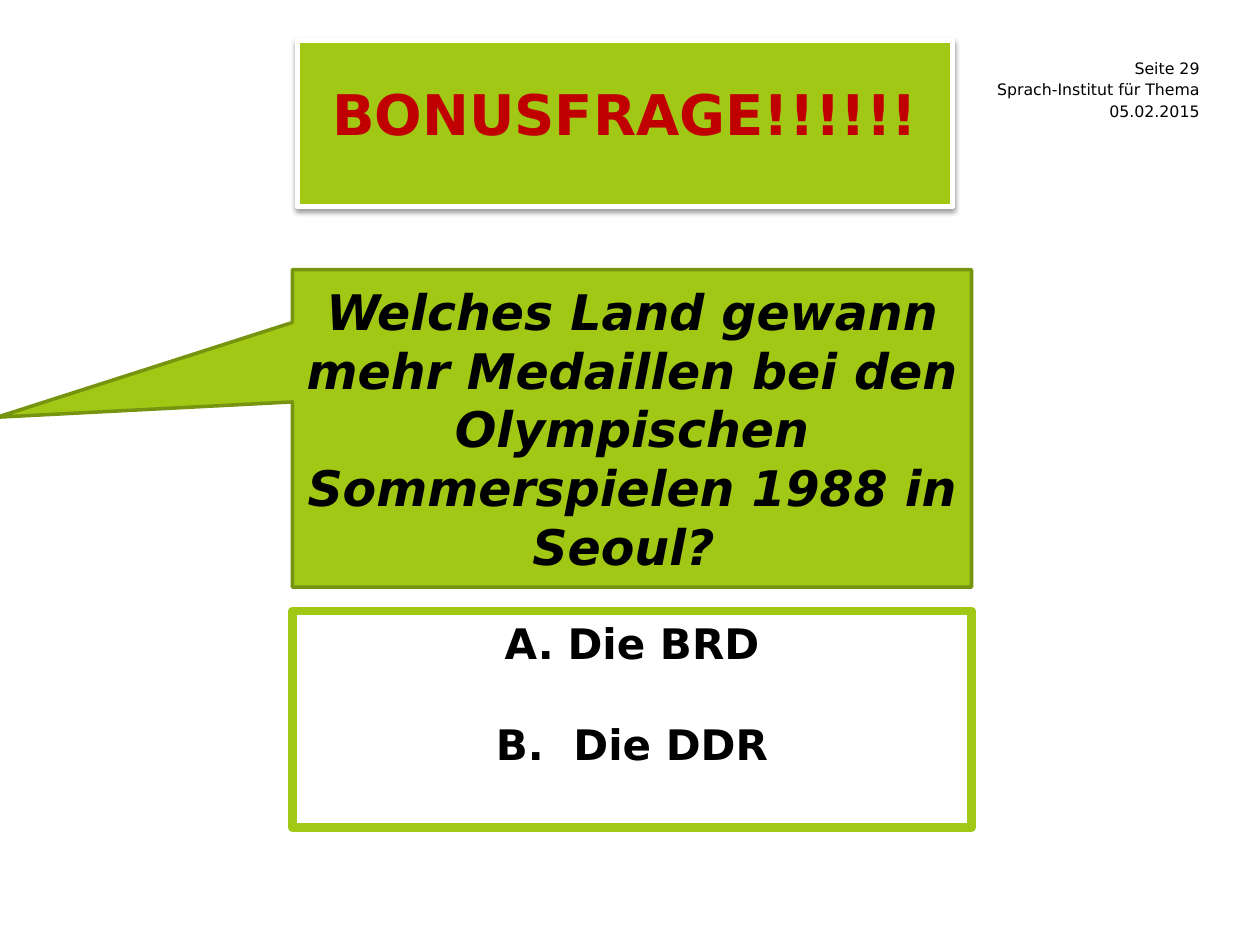
"""Build the bonus question slide of a German history quiz."""
from typing import Any, NamedTuple

from lxml.etree import SubElement
from pptx import Presentation
from pptx.dml.color import RGBColor
from pptx.enum.shapes import MSO_SHAPE as Preset
from pptx.enum.text import MSO_ANCHOR as Anchor, MSO_AUTO_SIZE as AutoSize, PP_ALIGN as Align
from pptx.oxml.ns import qn
from pptx.util import Inches, Pt

WIDTH, HEIGHT = Inches(10), Inches(7.5)
GREEN = RGBColor(0xA0, 0xC8, 0x14)
DARK_GREEN = RGBColor(0x76, 0x94, 0x0F)
RED = RGBColor(0xC0, 0x00, 0x00)
BLACK = RGBColor(0x00, 0x00, 0x00)
WHITE = RGBColor(0xFF, 0xFF, 0xFF)
FONT = "DejaVu Sans"
NO_MARGINS = dict.fromkeys(("margin_left", "margin_right", "margin_top", "margin_bottom"), 0)


class Area(NamedTuple):
    """A rectangle in percent of the slide's width and height."""

    left: float
    top: float
    width: float
    height: float


class Panel(NamedTuple):
    """A bordered shape with its preset, colours and line width in points."""

    preset: Preset
    area: Area
    fill: RGBColor | None
    border: RGBColor
    border_width: float


QUESTION = Panel(Preset.RECTANGULAR_CALLOUT, Area(23.2, 28.53, 53.9, 33.6), GREEN, DARK_GREEN, 2)
ANSWERS = Panel(Preset.RECTANGLE, Area(23.2, 64.67, 53.9, 22.93), None, GREEN, 5)
TITLE_AREA = Area(23.6, 4.27, 52, 17.6)
INFO_AREA = Area(73.2, 6.13, 22, 2.13)
INFO_PITCH = 2.27
INFO_LINES = ("Seite 29", "Sprach-Institut für Thema", "05.02.2015")


def apply(target: Any, values: dict[str, Any]) -> None:
    """Set every attribute named in values on the target."""
    for name, value in values.items():
        setattr(target, name, value)


def bounds(area: Area) -> dict[str, int]:
    """Convert an area to the slide's lengths."""
    sides = (WIDTH, HEIGHT, WIDTH, HEIGHT)
    return {name: round(share * side / 100)
            for name, share, side in zip(area._fields, area, sides)}


def write(paragraph: Any, wording: str, size: float, align: Align,
          color: RGBColor = BLACK, **style: bool) -> None:
    """Fill a paragraph with one formatted run."""
    paragraph.alignment = align
    run = paragraph.add_run()
    run.text = wording
    apply(run.font, {"name": FONT, "size": Pt(size), **style})
    run.font.color.rgb = color


def paint(shape: Any, fill: RGBColor | None, border: RGBColor, border_width: float) -> None:
    """Set a shape's fill and border."""
    if fill is None:
        shape.fill.background()
    else:
        shape.fill.solid()
        shape.fill.fore_color.rgb = fill
    shape.line.color.rgb = border
    shape.line.width = Pt(border_width)


def add_panel(slide: Any, panel: Panel, anchor: Anchor) -> Any:
    """Draw a panel and return its shape."""
    shape = slide.shapes.add_shape(panel.preset, **bounds(panel.area))
    shape.shadow.inherit = False
    paint(shape, panel.fill, panel.border, panel.border_width)
    apply(shape.text_frame, {"word_wrap": True, "vertical_anchor": anchor})
    return shape


def add_shadow(shape: Any) -> None:
    """Give a shape a soft shadow falling straight down."""
    effects = SubElement(shape._element.spPr, qn("a:effectLst"))
    shadow = SubElement(effects, qn("a:outerShdw"), blurRad=str(Pt(3.1)),
                        dist=str(Pt(1.6)), dir="5400000", rotWithShape="0")
    color = SubElement(shadow, qn("a:srgbClr"), val="000000")
    SubElement(color, qn("a:alpha"), val="38000")


def number(paragraph: Any) -> None:
    """Turn a paragraph into a lettered list item."""
    properties = paragraph._p.get_or_add_pPr()
    apply_indent = {"marL": Inches(0.5), "indent": -Inches(0.5)}
    for name, length in apply_indent.items():
        properties.set(name, str(length))
    SubElement(properties, qn("a:buFont"), typeface="+mj-lt")
    SubElement(properties, qn("a:buAutoNum"), type="alphaUcPeriod")


def format_title(title: Any) -> None:
    """Place and write the slide's title."""
    apply(title, bounds(TITLE_AREA))
    paint(title, GREEN, WHITE, 3)
    add_shadow(title)
    apply(title.text_frame, {**NO_MARGINS, "margin_bottom": Inches(0.16), "word_wrap": True,
                             "auto_size": AutoSize.NONE, "vertical_anchor": Anchor.MIDDLE})
    write(title.text_frame.paragraphs[0], "BONUSFRAGE!!!!!!", 32, Align.CENTER, RED, bold=True)


def add_info(slide: Any) -> None:
    """Stack the page details in the top right corner."""
    for row, wording in enumerate(INFO_LINES):
        area = INFO_AREA._replace(top=INFO_AREA.top + row * INFO_PITCH)
        frame = slide.shapes.add_textbox(**bounds(area)).text_frame
        apply(frame, {**NO_MARGINS, "word_wrap": True, "vertical_anchor": Anchor.MIDDLE})
        write(frame.paragraphs[0], wording, 9, Align.RIGHT)


def add_question(slide: Any) -> None:
    """Draw the question in its speech bubble."""
    bubble = add_panel(slide, QUESTION, Anchor.MIDDLE)
    bubble.adjustments[0], bubble.adjustments[1] = -0.935, -0.035
    write(bubble.text_frame.paragraphs[0],
          "Welches Land gewann mehr Medaillen bei den Olympischen "
          "Sommerspielen 1988 in Seoul? ", 28, Align.CENTER, bold=True, italic=True)


def add_answers(slide: Any) -> None:
    """Draw the lettered answers."""
    frame = add_panel(slide, ANSWERS, Anchor.TOP).text_frame
    first, second = frame.paragraphs[0], frame.add_paragraph()
    for answer, wording in ((first, "Die BRD"), (second, " Die DDR")):
        number(answer)
        write(answer, wording, 24, Align.CENTER, bold=True)
    second.space_before = Pt(29)


def main() -> None:
    """Assemble and save the slide."""
    deck = Presentation()
    apply(deck, {"slide_width": WIDTH, "slide_height": HEIGHT})
    slide = deck.slides.add_slide(deck.slide_layouts[5])
    add_info(slide)
    add_question(slide)
    add_answers(slide)
    format_title(slide.shapes.title)
    deck.save("out.pptx")


if __name__ == "__main__":
    main()
